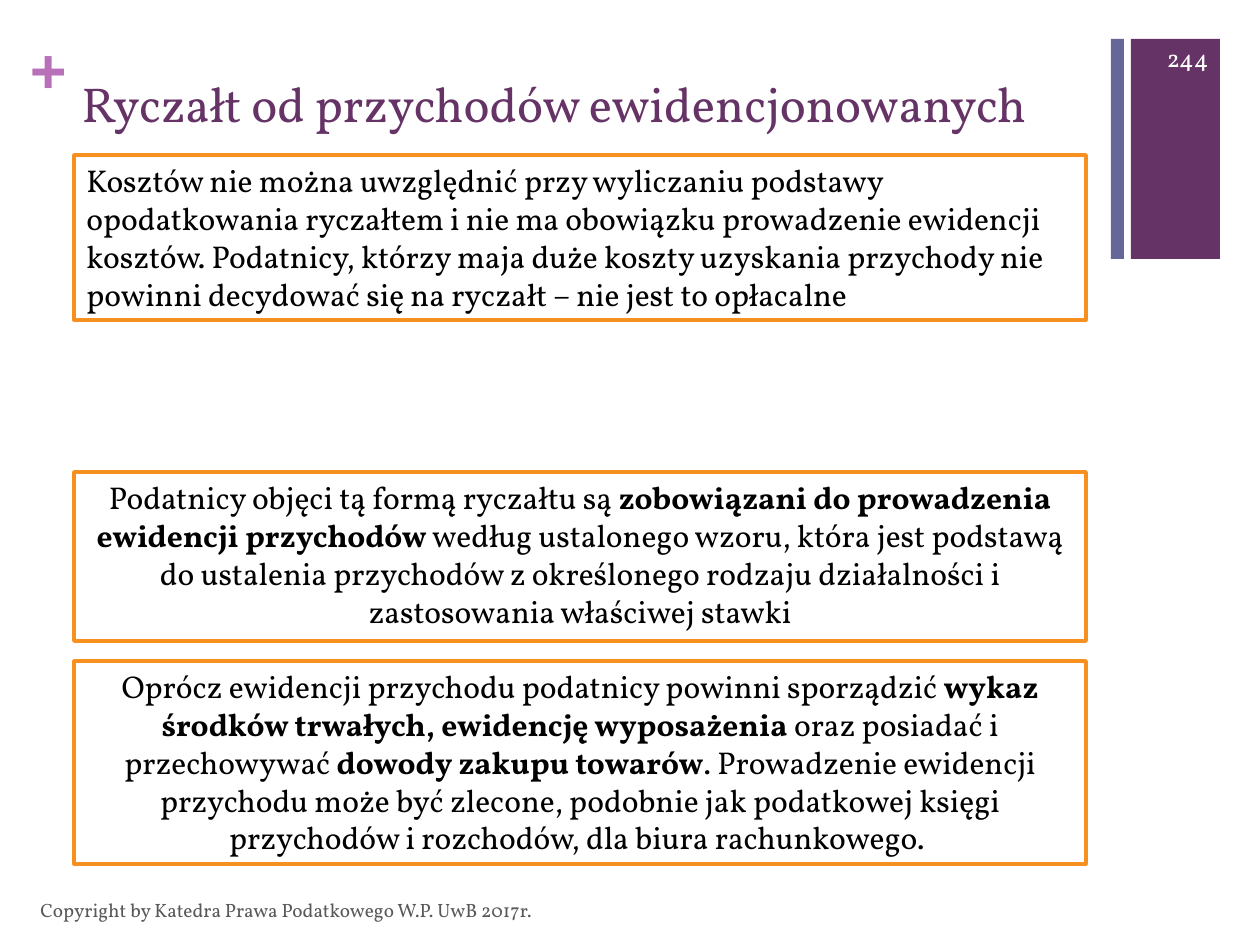
from pptx import Presentation
from pptx.dml.color import RGBColor
from pptx.enum.shapes import MSO_SHAPE as Shape
from pptx.enum.text import MSO_ANCHOR as Anchor, PP_ALIGN as Align
from pptx.util import Emu, Pt

PX = 914400 / 126
FONT = "Vollkorn"
PLUM = RGBColor(0x66, 0x33, 0x66)
SLATE = RGBColor(0x66, 0x66, 0x99)
ORCHID = RGBColor(0xB8, 0x70, 0xB8)
ORANGE = RGBColor(0xF7, 0x90, 0x1E)
GRAY = RGBColor(0x59, 0x59, 0x59)
WHITE = RGBColor(0xFF, 0xFF, 0xFF)
BLACK = RGBColor(0, 0, 0)

COSTS = [
    "Kosztów nie można uwzględnić przy wyliczaniu podstawy opodatkowania "
    "ryczałtem i nie ma obowiązku prowadzenie ewidencji kosztów. Podatnicy, "
    "którzy maja duże koszty uzyskania przychody nie powinni decydować się "
    "na ryczałt – nie jest to opłacalne",
]
# Every second part of a text is bold.
RECORDS = [
    "Podatnicy objęci tą formą ryczałtu są ",
    "zobowiązani do prowadzenia ewidencji przychodów",
    " według ustalonego wzoru, która jest podstawą do ustalenia przychodów "
    "z określonego rodzaju działalności i zastosowania właściwej stawki",
]
DUTIES = [
    "Oprócz ewidencji przychodu podatnicy powinni sporządzić ",
    "wykaz środków trwałych, ewidencję wyposażenia",
    " oraz posiadać i przechowywać ",
    "dowody zakupu towarów",
    ". Prowadzenie ewidencji przychodu może być zlecone, podobnie jak "
    "podatkowej księgi przychodów i rozchodów, dla biura rachunkowego. ",
]


def px(*nums):
    return [Emu(round(n * PX)) for n in nums]


def write(shape, parts, size, color, align=Align.LEFT, anchor=Anchor.TOP,
          face=FONT):
    """Fill a shape with one paragraph whose odd parts are bold."""
    frame = shape.text_frame
    frame.word_wrap = True
    frame.vertical_anchor = anchor
    para = frame.paragraphs[0]
    para.alignment = align
    para.font.name = face
    para.font.size = Pt(size)
    para.font.color.rgb = color
    for num, part in enumerate(parts):
        run = para.add_run()
        run.text = part
        if num % 2:
            run.font.bold = True
    return frame


def add_rect(slide, box, fill):
    rect = slide.shapes.add_shape(Shape.RECTANGLE, *px(*box))
    rect.shadow.inherit = False
    rect.fill.solid()
    rect.fill.fore_color.rgb = fill
    rect.line.fill.background()
    return rect


def add_panel(slide, top, height, parts, align):
    panel = add_rect(slide, (74, top, 1012, height), WHITE)
    panel.line.color.rgb = ORANGE
    panel.line.width = Pt(2)
    write(panel, parts, 18, BLACK, align)


def add_label(slide, box, text, size, color, **style):
    label = slide.shapes.add_textbox(*px(*box))
    return write(label, [text], size, color, **style)


def add_plus(slide):
    frame = add_label(slide, (30, 31, 37, 77), "+", 36, ORCHID, face="Arial")
    frame.paragraphs[0].font.bold = True
    frame.margin_left = frame.margin_right = 0
    frame.margin_top = frame.margin_bottom = 0


def set_title(slide, text):
    title = slide.shapes.title
    title.left, title.top, title.width, title.height = px(69, 67, 1041, 154)
    write(title, [text], 28, PLUM)


def main():
    deck = Presentation()
    deck.slide_width, deck.slide_height = px(1260, 945)
    slide = deck.slides.add_slide(deck.slide_layouts[5])

    add_rect(slide, (1131, 39, 89, 220), PLUM)
    add_plus(slide)
    add_rect(slide, (1111, 39, 13, 220), SLATE)
    set_title(slide, "Ryczałt od przychodów ewidencjonowanych")
    add_label(slide, (28, 885, 844, 50),
              "Copyright by Katedra Prawa Podatkowego W.P. UwB 2017r.",
              11, GRAY, anchor=Anchor.MIDDLE)
    add_label(slide, (1144, 33, 77, 50), "244", 14, WHITE,
              align=Align.RIGHT, anchor=Anchor.MIDDLE)

    add_panel(slide, 155, 165, COSTS, Align.LEFT)
    add_panel(slide, 472, 169, RECORDS, Align.CENTER)
    add_panel(slide, 661, 203, DUTIES, Align.CENTER)
    deck.save("out.pptx")


if __name__ == "__main__":
    main()
